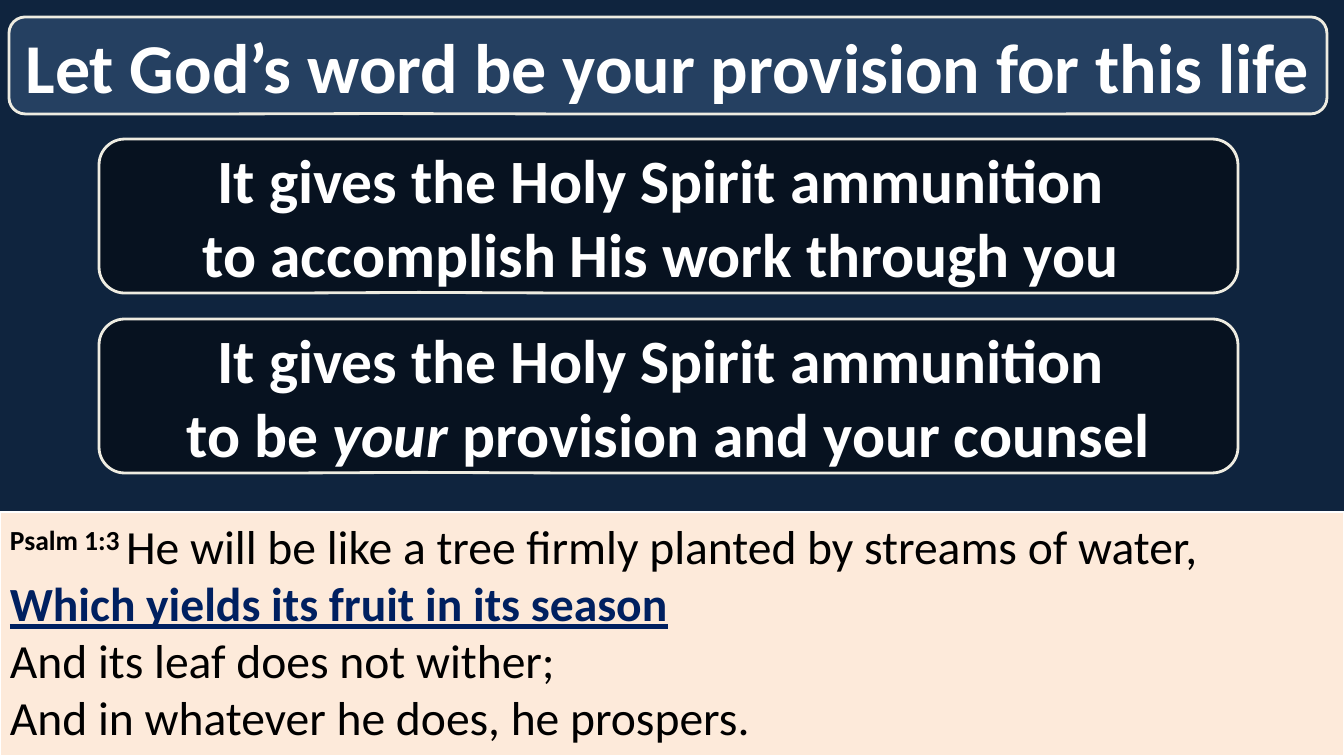
from lxml import etree
from pptx import Presentation
from pptx.dml.color import RGBColor
from pptx.enum.shapes import MSO_SHAPE as Shape
from pptx.enum.text import MSO_ANCHOR as Anchor, PP_ALIGN as Align
from pptx.oxml.ns import qn
from pptx.util import Pt

EMU_PER_PX = 914400 / 100.8
FONT = "Calibri"
WHITE, BLACK, CREAM, NAVY = "FFFFFF", "000000", "EEECE1", "002060"


def px(length):
    return round(length * EMU_PER_PX)


def rgb(value):
    return RGBColor.from_string(value)


def add_panel(slide, kind, box, fill, line, line_width, opacity=None):
    shape = slide.shapes.add_shape(kind, *map(px, box))
    shape.shadow.inherit = False
    shape.fill.solid()
    shape.fill.fore_color.rgb = rgb(fill)
    shape.line.color.rgb = rgb(line)
    shape.line.width = Pt(line_width)
    if opacity is not None:
        color = shape.fill._xPr.find(qn("a:solidFill"))[0]
        etree.SubElement(color, qn("a:alpha")).set("val", str(opacity * 1000))
    return shape


def add_run(paragraph, text, size, color, raised=0, **formats):
    run = paragraph.add_run()
    run.text = text
    run.font.color.rgb = rgb(color)
    for name, value in {"name": FONT, "size": Pt(size), **formats}.items():
        setattr(run.font, name, value)
    if raised:
        run.font._element.set("baseline", str(raised * 1000))


def add_callout(slide, box, fill, size, lines, opacity=None):
    """Each line is a list of (text, italic) pieces."""
    shape = add_panel(slide, Shape.ROUNDED_RECTANGULAR_CALLOUT, box,
                      fill, CREAM, 2, opacity)
    for index, value in enumerate((-0.219, 0.496, 0.167)):
        shape.adjustments[index] = value
    frame = shape.text_frame
    frame.vertical_anchor = Anchor.MIDDLE
    for index, pieces in enumerate(lines):
        paragraph = frame.add_paragraph() if index else frame.paragraphs[0]
        paragraph.alignment = Align.CENTER
        for text, italic in pieces:
            add_run(paragraph, text, size, WHITE, bold=True, italic=italic)


def add_passage(slide, box, reference, verses):
    """Each verse is (text, colour, emphasised)."""
    shape = add_panel(slide, Shape.RECTANGLE, box, "FDEADA", WHITE, 1.5)
    frame = shape.text_frame
    frame.vertical_anchor = Anchor.TOP
    paragraph = frame.paragraphs[0]
    paragraph.alignment = Align.LEFT
    add_run(paragraph, reference, 34, BLACK, raised=30, bold=True)
    for index, (text, color, emphasised) in enumerate(verses):
        if index:
            paragraph.add_line_break()
        add_run(paragraph, text, 34, color, bold=emphasised, underline=emphasised)


def main():
    presentation = Presentation()
    presentation.slide_width, presentation.slide_height = px(1344), px(756)
    slide = presentation.slides.add_slide(presentation.slide_layouts[6])
    slide.background.fill.solid()
    slide.background.fill.fore_color.rgb = rgb("0F243E")

    # Scripture passage
    add_passage(slide, (0, 512, 1344, 244), "Psalm 1:3 ", [
        ("He will be like a tree firmly planted by streams of water,", BLACK, False),
        ("Which yields its fruit in its season", NAVY, True),
        ("And its leaf does not wither;", BLACK, False),
        ("And in whatever he does, he prospers.", BLACK, False),
    ])

    # Title
    add_callout(slide, (9, 17, 1318, 97), "254061", 50,
                [[("Let God’s word be your provision for this life ", False)]])

    # Points, sharing the same opening line
    opening = [("It gives the Holy Spirit ammunition ", False)]
    endings = [
        [("to accomplish His work through you ", False)],
        [("to be ", False), ("your", True), (" provision and your counsel", False)],
    ]
    for index, ending in enumerate(endings):
        add_callout(slide, (99, 139 + 180 * index, 1139, 154), BLACK, 44,
                    [opening, ending], opacity=48)

    presentation.save("out.pptx")


if __name__ == "__main__":
    main()
